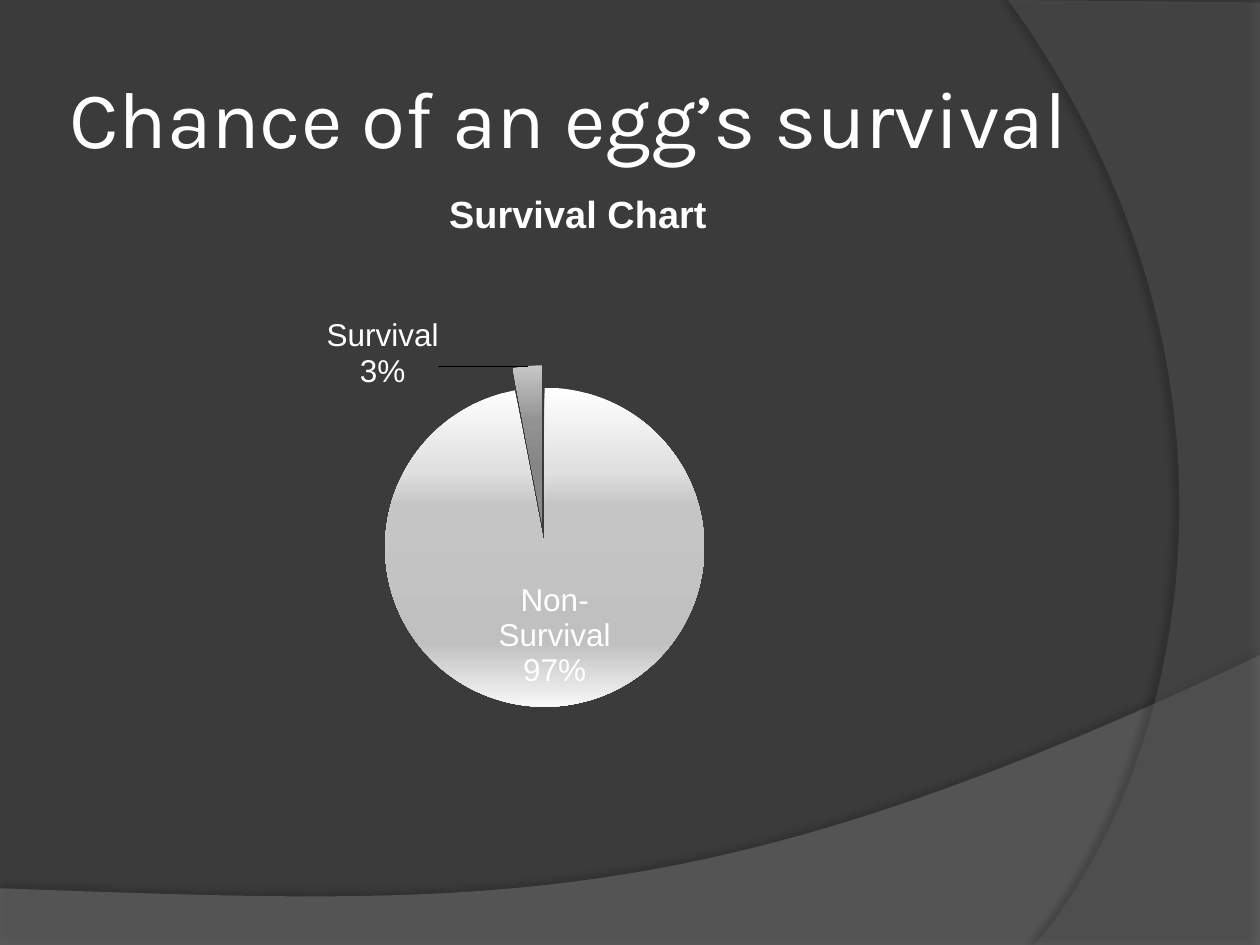
from dataclasses import dataclass

import lxml.etree
import pptx
import pptx.chart.data
import pptx.dml.color
import pptx.enum.chart
import pptx.enum.text
import pptx.oxml
import pptx.oxml.ns
import pptx.util

Inches = pptx.util.Inches
Pt = pptx.util.Pt
qn = pptx.oxml.ns.qn
Point = tuple[float, float]

COLORS = {"background": "3B3B3B", "text": "FFFFFF", "shadow": "000000",
          "wave": "7F7F7F", "arc": "5E5E5E"}
CHART_WIDTH, CHART_HEIGHT = 8.17, 4.95


@dataclass
class Backdrop:
    before: list[Point]
    curve: tuple[Point, Point, Point, Point]
    after: list[Point]
    color: str
    opacity: int
    shadow_opacity: int
    blur: float
    distance: float
    direction: int


@dataclass
class Slice:
    """Gradient stops run from top to bottom; the label shift is in inches."""
    stops: list[tuple[int, str]]
    label_position: pptx.enum.chart.XL_LABEL_POSITION
    label_shift: Point


BACKDROPS = [
    Backdrop([(0, 7.05), (0, 7.51), (10, 7.51)],
             ((10, 5.2), (5.59, 7.29), (3.91, 7.19), (0, 7.05)), [],
             "wave", 45, 35, 4, 3.5, 270),
    Backdrop([(10, 0.02), (10, 7.5)],
             ((8.21, 7.5), (9.35, 6.19), (10.18, 3), (8, 0)), [(10, 0.02)],
             "arc", 40, 45, 4, 4, 180),
]
SLICES = [
    Slice([(0, "FFFFFF"), (26, "E0E0E0"), (37, "C5C5C5"), (80, "C0C0C0"), (100, "F8F8F8")],
          pptx.enum.chart.XL_LABEL_POSITION.INSIDE_END, (0.41, -0.08)),
    Slice([(0, "C6C6C6"), (36, "929292"), (65, "858585"), (100, "8C8C8C")],
          pptx.enum.chart.XL_LABEL_POSITION.OUTSIDE_END, (-0.7, 0.24)),
]


def rgb(name: str) -> pptx.dml.color.RGBColor:
    return pptx.dml.color.RGBColor.from_string(COLORS[name])


def draw_backdrop(slide: pptx.slide.Slide, backdrop: Backdrop) -> None:
    curve_start, *controls, curve_end = backdrop.curve
    outline = backdrop.before + [curve_start, curve_end] + backdrop.after
    start, *rest = [(Inches(x), Inches(y)) for x, y in outline]
    builder = slide.shapes.build_freeform(*start)
    builder.add_line_segments(rest, close=True)
    shape = builder.convert_to_shape()

    segment = shape._element.findall(".//" + qn("a:lnTo"))[len(backdrop.before)]
    bezier = lxml.etree.Element(qn("a:cubicBezTo"))
    for x, y in controls:
        lxml.etree.SubElement(bezier, qn("a:pt"), x=str(Inches(x) - shape.left),
                              y=str(Inches(y) - shape.top))
    bezier.append(segment[0])
    segment.getparent().replace(segment, bezier)

    shape.line.fill.background()
    shape.fill.solid()
    shape.fill.fore_color.rgb = rgb(backdrop.color)
    fill_color = shape._element.spPr.find(".//" + qn("a:srgbClr"))
    lxml.etree.SubElement(fill_color, qn("a:alpha"), val=str(backdrop.opacity * 1000))
    shape.shadow.inherit = False
    effects = shape._element.spPr.find(qn("a:effectLst"))
    shadow = lxml.etree.SubElement(
        effects, qn("a:outerShdw"), blurRad=str(Pt(backdrop.blur)),
        dist=str(Pt(backdrop.distance)), dir=str(backdrop.direction * 60000),
        algn="ctr", rotWithShape="0")
    shadow_color = lxml.etree.SubElement(shadow, qn("a:srgbClr"), val=COLORS["shadow"])
    lxml.etree.SubElement(shadow_color, qn("a:alpha"),
                          val=str(backdrop.shadow_opacity * 1000))


def style_font(font: pptx.text.text.Font, size: float, name: str, bold: bool = False) -> None:
    font.size, font.name, font.bold = Pt(size), name, bold
    font.color.rgb = rgb("text")


def manual_layout(x: float, y: float, **settings: str | float) -> lxml.etree._Element:
    """Turn inches within the chart into a layout given in fractions."""
    layout = lxml.etree.Element(qn("c:layout"))
    manual = lxml.etree.SubElement(layout, qn("c:manualLayout"))
    sizes = {"x": CHART_WIDTH, "y": CHART_HEIGHT, "w": CHART_WIDTH, "h": CHART_HEIGHT}
    for tag, value in {**{k: v for k, v in settings.items() if k not in sizes},
                       "x": x, "y": y,
                       **{k: v for k, v in settings.items() if k in sizes}}.items():
        fraction = value / sizes[tag] if tag in sizes else value
        lxml.etree.SubElement(manual, qn(f"c:{tag}"), val=str(fraction))
    return layout


def drop_layout(parent: lxml.etree._Element) -> None:
    for layout in parent.findall(qn("c:layout")):
        parent.remove(layout)


def fill_slice(point: pptx.chart.point.Point, stops: list[tuple[int, str]]) -> None:
    point.format.line.fill.background()
    fill = point.format.fill
    fill.gradient()
    fill.gradient_angle = 270
    stop_list = point._element.findall(".//" + qn("a:gsLst"))[-1]
    for old_stop in list(stop_list):
        stop_list.remove(old_stop)
    for position, color in stops:
        stop = lxml.etree.SubElement(stop_list, qn("a:gs"), pos=str(position * 1000))
        lxml.etree.SubElement(stop, qn("a:srgbClr"), val=color)


def show_category_and_percent(labels: lxml.etree._Element) -> None:
    for tag, shown in (("showVal", "0"), ("showCatName", "1"), ("showPercent", "1")):
        labels.find(qn(f"c:{tag}")).set("val", shown)
    separator = lxml.etree.Element(qn("c:separator"))
    separator.text = "\n"
    last_flag = labels.find(qn("c:showBubbleSize"))
    if last_flag is None:
        last_flag = labels.find(qn("c:showPercent"))
    last_flag.addnext(separator)


def draw_survival_chart(slide: pptx.slide.Slide) -> None:
    survival = pptx.chart.data.CategoryChartData()
    survival.categories = ["Non-Survival", "Survival"]
    survival.add_series("Survival Chart", [97, 3])
    chart = slide.shapes.add_chart(
        pptx.enum.chart.XL_CHART_TYPE.PIE, Inches(0.5), Inches(1.42),
        Inches(CHART_WIDTH), Inches(CHART_HEIGHT), survival).chart
    style_font(chart.font, 18, "Arial")
    chart.has_legend = False
    chart.has_title = True
    heading = chart.chart_title.text_frame
    heading.text = "Survival Chart"
    style_font(heading.paragraphs[0].runs[0].font, 21.6, "Arial", bold=True)
    title_element = chart.chart_title._element
    drop_layout(title_element)
    title_element.find(qn("c:tx")).addnext(
        manual_layout(3.01, 0.03, xMode="edge", yMode="edge"))

    plot_area = chart._chartSpace.chart.plotArea
    drop_layout(plot_area)
    plot_area.insert(0, manual_layout(2.46, 1.48, layoutTarget="inner", xMode="edge",
                                      yMode="edge", w=2.71, h=2.71))

    plot = chart.plots[0]
    plot.vary_by_categories = True
    series = plot.series[0]
    labels = series.data_labels
    style_font(labels.font, 18, "Arial")
    show_category_and_percent(labels._element)
    for index, part in enumerate(SLICES):
        point = series.points[index]
        fill_slice(point, part.stops)
        style_font(point.data_label.font, 18, "Arial")
        point.data_label.position = part.label_position
        label = labels._element.findall(qn("c:dLbl"))[index]
        show_category_and_percent(label)
        label.find(qn("c:idx")).addnext(manual_layout(*part.label_shift))
    explosion = lxml.etree.Element(qn("c:explosion"), val="7")
    series._element.find(qn("c:dPt")).addprevious(explosion)


def main() -> None:
    presentation = pptx.Presentation()
    presentation.slide_width, presentation.slide_height = Inches(10), Inches(7.5)
    slide = presentation.slides.add_slide(presentation.slide_layouts[5])
    slide.background.fill.solid()
    slide.background.fill.fore_color.rgb = rgb("background")
    for backdrop in BACKDROPS:
        draw_backdrop(slide, backdrop)

    title = slide.shapes.title
    slide.shapes._spTree.append(title._element)
    title.left, title.top = Inches(0.5), Inches(0.3)
    title.width, title.height = Inches(8.17), Inches(1.25)
    frame = title.text_frame
    frame.text = "Chance of an egg’s survival"
    frame.word_wrap = True
    frame.auto_size = pptx.enum.text.MSO_AUTO_SIZE.NONE
    frame.vertical_anchor = pptx.enum.text.MSO_ANCHOR.MIDDLE
    frame.margin_left = frame.margin_right = Inches(0.05)
    frame.margin_top = frame.margin_bottom = Inches(0.05)
    frame.paragraphs[0].alignment = pptx.enum.text.PP_ALIGN.LEFT
    style_font(frame.paragraphs[0].runs[0].font, 46, "Karla")

    draw_survival_chart(slide)
    presentation.save("out.pptx")


if __name__ == "__main__":
    main()
